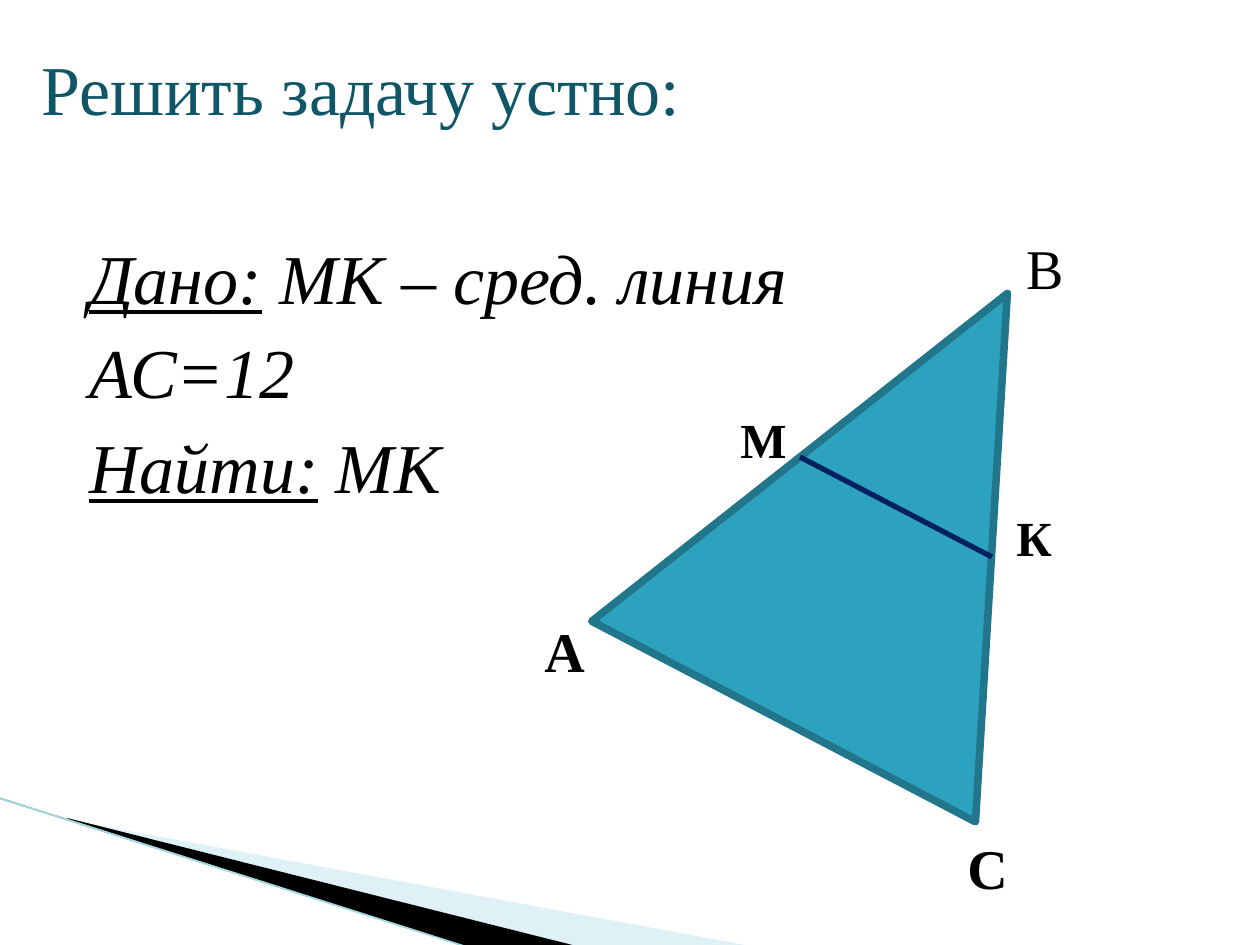
from pptx import Presentation
from pptx.dml.color import RGBColor
from pptx.enum.shapes import MSO_CONNECTOR, MSO_SHAPE
from pptx.oxml.ns import qn
from pptx.util import Emu, Pt
from lxml.etree import SubElement

EMU_PER_PX = 914400 / 126
FONT = "Times New Roman"
COLORS = {
    "title": "0F5666",
    "ink": "000000",
    "triangle": "2DA2BF",
    "side": "21768C",
    "midline": "002060",
    "pale": "ABDEEA",
    "edge": "A3D9E7",
}


def px(length):
    return Emu(round(length * EMU_PER_PX))


def color(name):
    return RGBColor.from_string(COLORS[name])


def add_run(paragraph, text, size=40, ink="ink", bold=False, italic=False, underline=False):
    run = paragraph.add_run()
    run.text = text
    font = run.font
    font.name = FONT
    font.size = Pt(size)
    font.color.rgb = color(ink)
    font.bold = bold
    font.italic = italic
    font.underline = underline


class SlideBuilder:
    def __init__(self, slide):
        self.slide = slide
        self.shapes = slide.shapes

    def paint(self, shape, fill=None, line=None, width=0, alpha=None):
        shape.shadow.inherit = False
        if fill:
            shape.fill.solid()
            shape.fill.fore_color.rgb = color(fill)
            if alpha:
                tint = shape.fill._xPr.find(qn("a:solidFill"))[0]
                SubElement(tint, qn("a:alpha"), val=str(alpha * 1000))
        else:
            shape.fill.background()
        if line:
            shape.line.color.rgb = color(line)
            shape.line.width = Pt(width)
        else:
            shape.line.fill.background()

    def polygon(self, points, **style):
        start, *rest = points
        builder = self.shapes.build_freeform(*start, scale=EMU_PER_PX)
        builder.add_line_segments(rest, close=True)
        self.paint(builder.convert_to_shape(), **style)

    def preset(self, kind, box, rotation=0, **style):
        shape = self.shapes.add_shape(kind, *map(px, box))
        shape.rotation = rotation
        self.paint(shape, **style)

    def line(self, start, end, ink, width):
        connector = self.shapes.add_connector(
            MSO_CONNECTOR.STRAIGHT, *map(px, (*start, *end)))
        connector.line.color.rgb = color(ink)
        connector.line.width = Pt(width)
        SubElement(connector._element.spPr, qn("a:effectLst"))

    def text(self, box, paragraphs, space=0, margin=0, indent=0):
        frame = self.shapes.add_textbox(*map(px, box)).text_frame
        frame.word_wrap = True
        for index, runs in enumerate(paragraphs):
            paragraph = frame.paragraphs[0] if index == 0 else frame.add_paragraph()
            if index:
                paragraph.space_before = Pt(space)
            if margin:
                properties = paragraph._p.get_or_add_pPr()
                properties.set("marL", str(px(margin)))
                properties.set("indent", str(px(indent)))
            for words, style in runs:
                add_run(paragraph, words, **style)


def main():
    presentation = Presentation()
    presentation.slide_width, presentation.slide_height = px(1260), px(945)
    page = SlideBuilder(presentation.slides.add_slide(presentation.slide_layouts[6]))

    page.polygon([(69, 820), (750, 946), (575, 946), (69, 819)], fill="pale", alpha=40)
    page.polygon([(67, 818), (576, 946), (469, 947), (68, 819)], fill="ink")
    page.preset(MSO_SHAPE.RIGHT_TRIANGLE, (-1, 798, 469, 149), line="ink", width=0.75)
    page.line((-1, 798), (467, 947), "edge", 0.95)

    page.text((29, 39, 945, 97), [[("Решить задачу устно:", {"ink": "title"})]])

    statement = {"italic": True}
    heading = {"italic": True, "underline": True}
    page.text(
        (63, 228, 1134, 274),
        [
            [("Дано:", heading), (" МК – сред. линия", statement)],
            [("АС=12", statement)],
            [("Найти:", heading), (" ", {}), ("МК", statement)],
        ],
        space=6, margin=50, indent=-36)

    page.preset(MSO_SHAPE.ISOSCELES_TRIANGLE, (679, 266, 433, 483), rotation=27.6,
                fill="triangle", line="side", width=4.33)

    for letter, left, top, size, bold in [
        ("А", 532, 610, 32, True),
        ("К", 1004, 501, 28, True),
        ("М", 728, 403, 28, True),
        ("С", 955, 827, 32, True),
        ("В", 1014, 227, 32, False),
    ]:
        page.text((left, top, 69, 76), [[(letter, {"size": size, "bold": bold})]])

    page.line((800, 457), (992, 557), "midline", 3)

    presentation.save("out.pptx")


if __name__ == "__main__":
    main()
